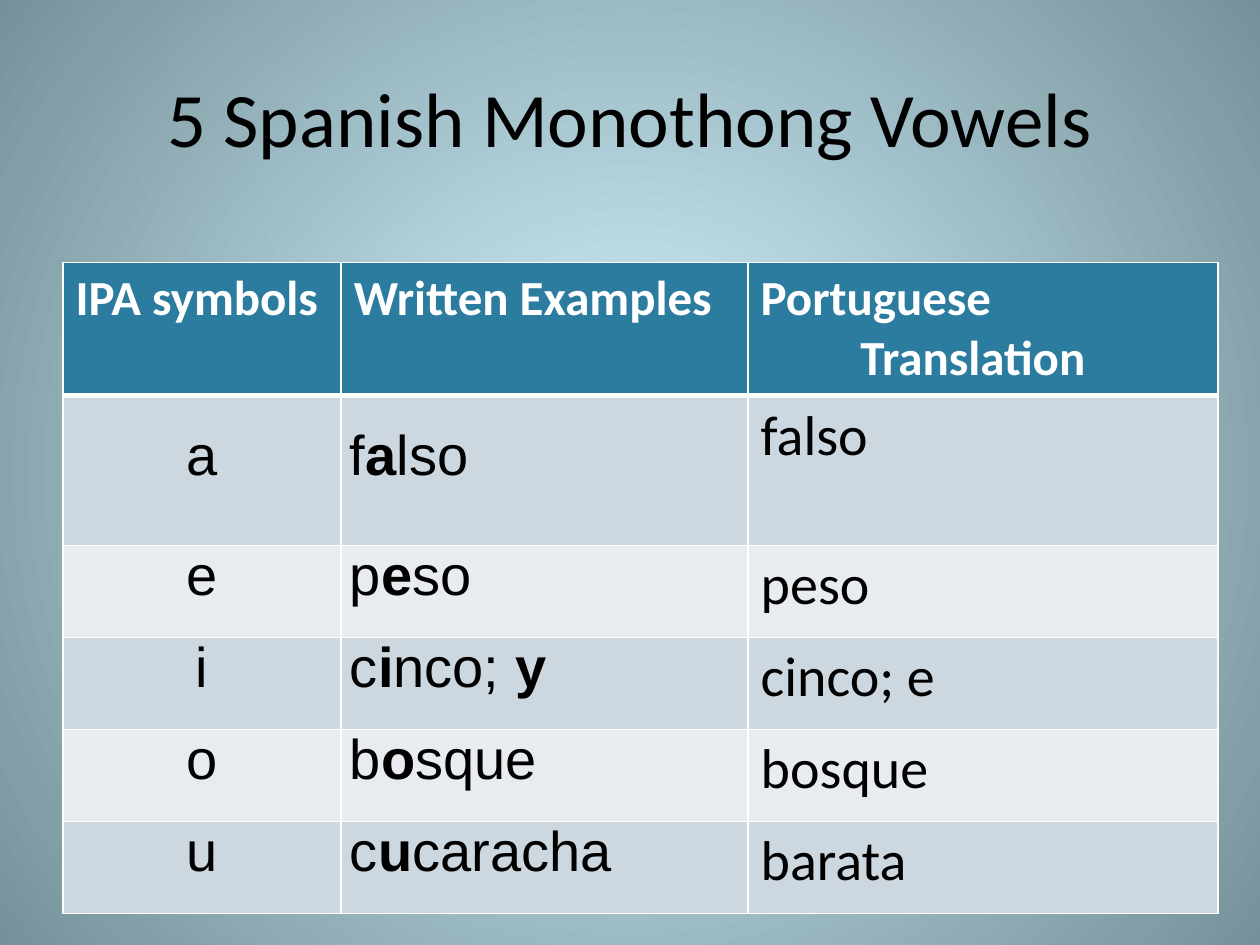
from lxml import etree
from pptx import Presentation
from pptx.dml.color import RGBColor
from pptx.enum.text import MSO_ANCHOR, PP_ALIGN
from pptx.oxml.ns import qn
from pptx.util import Pt

CENTER = PP_ALIGN.CENTER
LEFT = PP_ALIGN.LEFT
TOP = MSO_ANCHOR.TOP
MIDDLE = MSO_ANCHOR.MIDDLE

BLACK = RGBColor(0x00, 0x00, 0x00)
WHITE = RGBColor(0xFF, 0xFF, 0xFF)
HEADER_BLUE = RGBColor(0x2C, 0x7C, 0x9F)
BAND_COLORS = (RGBColor(0xCD, 0xD7, 0xDF), RGBColor(0xE8, 0xEC, 0xF0))
GLOW = RGBColor(0xD5, 0xF5, 0xFF)
EDGE = RGBColor(0x75, 0x91, 0x9A)

COLUMN_WIDTHS = (159, 232.5, 268.5)
ROW_HEIGHTS = (76, 85.6, 52.6, 52.6, 52.6, 52.6)

# Each header is a list of (text, left indent) paragraphs
HEADERS = (
    [("IPA symbols", 0)],
    [("Written Examples", 0)],
    [("Portuguese", 0), ("Translation", 57)],
)
# Symbol, example as (text, bold) runs, translation
VOWELS = (
    ("a", [("f", False), ("a", True), ("lso", False)], "falso"),
    ("e", [("p", False), ("e", True), ("so", False)], "peso"),
    ("i", [("c", False), ("i", True), ("nco; ", False), ("y", True)], "cinco; e"),
    ("o", [("b", False), ("o", True), ("sque", False)], "bosque"),
    ("u", [("c", False), ("u", True), ("caracha", False)], "barata"),
)


def add_run(paragraph, text, font_name, size, color, bold=False):
    run = paragraph.add_run()
    run.text = text
    run.font.name = font_name
    run.font.size = Pt(size)
    run.font.bold = bold
    run.font.color.rgb = color


def set_background(slide):
    fill = slide.background.fill
    fill.gradient()
    for stop, color, position in zip(fill.gradient_stops, (GLOW, EDGE), (0, 1)):
        stop.color.rgb = color
        stop.position = position
    # Turn the linear gradient into a circular one
    gradient = slide.element.find(".//" + qn("a:gradFill"))
    gradient.remove(gradient.find(qn("a:lin")))
    circle = etree.SubElement(gradient, qn("a:path"), path="circle")
    sides = {side: "50000" for side in "ltrb"}
    etree.SubElement(circle, qn("a:fillToRect"), **sides)


def set_title(slide, text):
    title = slide.shapes.title
    title.left, title.top, title.width, title.height = Pt(36), Pt(21.6), Pt(648), Pt(90)
    title.text_frame.vertical_anchor = MIDDLE
    paragraph = title.text_frame.paragraphs[0]
    paragraph.alignment = CENTER
    add_run(paragraph, text, "Calibri", 44, BLACK)


def style_cell(cell, color, top=1, bottom=1):
    properties = cell._tc.get_or_add_tcPr()
    for side, width in (("L", 1), ("R", 1), ("T", top), ("B", bottom)):
        line = etree.SubElement(properties, qn("a:ln" + side), w=str(Pt(width)))
        solid = etree.SubElement(line, qn("a:solidFill"))
        etree.SubElement(solid, qn("a:srgbClr"), val=str(WHITE))
    cell.fill.solid()
    cell.fill.fore_color.rgb = color


def fill_header(cell, lines):
    style_cell(cell, HEADER_BLUE, bottom=3)
    for index, (text, indent) in enumerate(lines):
        frame = cell.text_frame
        paragraph = frame.add_paragraph() if index else frame.paragraphs[0]
        if indent:
            paragraph._p.get_or_add_pPr().set("marL", str(Pt(indent)))
        add_run(paragraph, text, "Calibri", 28, WHITE, True)


def fill_body(cell, runs, font_name, alignment=LEFT):
    paragraph = cell.text_frame.paragraphs[0]
    paragraph.alignment = alignment
    for text, bold in runs:
        add_run(paragraph, text, font_name, 32, BLACK, bold)


def set_tight(cell):
    """Middle anchor, narrow margins and fixed line spacing."""
    cell.vertical_anchor = MIDDLE
    cell.margin_left = cell.margin_right = Pt(5)
    cell.margin_top = cell.margin_bottom = Pt(0)
    cell.text_frame.paragraphs[0].line_spacing = Pt(19)


def add_vowel_table(slide):
    frame = slide.shapes.add_table(
        len(ROW_HEIGHTS), len(COLUMN_WIDTHS), Pt(36), Pt(150),
        Pt(sum(COLUMN_WIDTHS)), Pt(sum(ROW_HEIGHTS)))
    table = frame.table
    table.first_row = table.horz_banding = False
    for column, width in zip(table.columns, COLUMN_WIDTHS):
        column.width = Pt(width)
    for row, height in zip(table.rows, ROW_HEIGHTS):
        row.height = Pt(height)

    # Header row
    for column_index, lines in enumerate(HEADERS):
        fill_header(table.cell(0, column_index), lines)

    # One banded row per vowel
    for index, (symbol, example, translation) in enumerate(VOWELS):
        cells = [table.cell(index + 1, column) for column in range(3)]
        for cell in cells:
            style_cell(cell, BAND_COLORS[index % 2], top=1 if index else 3)
        fill_body(cells[0], [(symbol, False)], "Arial", CENTER)
        fill_body(cells[1], example, "Arial")
        fill_body(cells[2], [(translation, False)], "Calibri")
        set_tight(cells[0])
        set_tight(cells[1])
        cells[2].vertical_anchor = TOP


def main():
    presentation = Presentation()
    presentation.slide_width, presentation.slide_height = Pt(720), Pt(540)
    slide = presentation.slides.add_slide(presentation.slide_layouts[5])
    set_background(slide)
    set_title(slide, "5 Spanish Monothong Vowels")
    add_vowel_table(slide)
    presentation.save("out.pptx")


if __name__ == "__main__":
    main()
